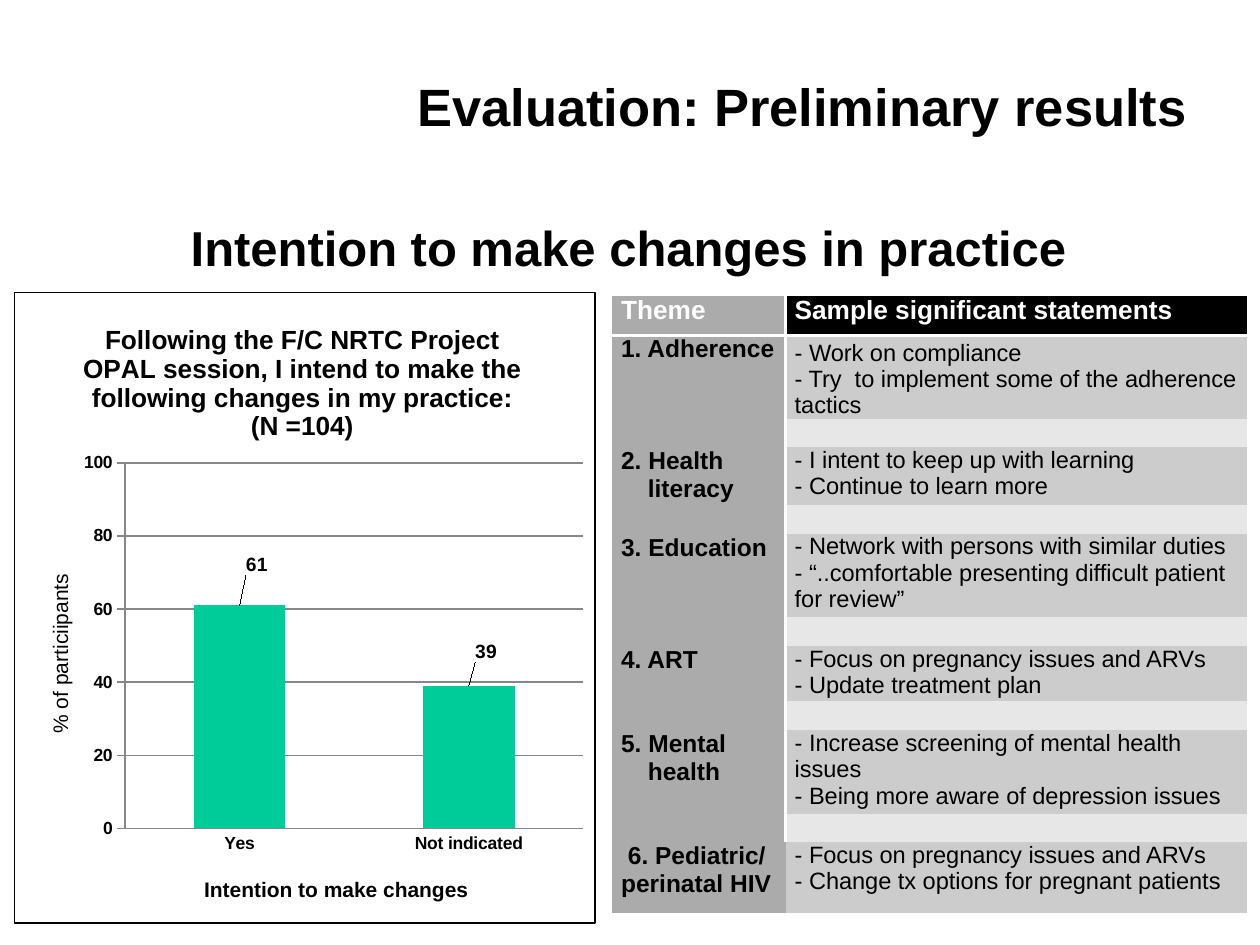
"""Build the slide on intention to make changes in practice."""
from dataclasses import dataclass

from lxml import etree
from pptx import Presentation
from pptx import util as u
from pptx.chart.data import CategoryChartData
from pptx.dml.color import RGBColor
from pptx.enum import chart as charts
from pptx.enum import text
from pptx.oxml.ns import qn

BLACK = RGBColor(0x00, 0x00, 0x00)
WHITE = RGBColor(0xFF, 0xFF, 0xFF)
GREEN = RGBColor(0x00, 0xCC, 0x99)
AXIS_GRAY = RGBColor(0x87, 0x87, 0x87)
THEME_GRAY = RGBColor(0xAB, 0xAB, 0xAB)
STATEMENT_GRAY = RGBColor(0xCC, 0xCC, 0xCC)
SPACER_GRAY = RGBColor(0xE7, 0xE7, 0xE7)
NO_STYLE = "{2D5ABB26-0587-4C30-8999-92F81FD0307C}"
SPACER_HEIGHT = 0.58


@dataclass
class Theme:
    name: str
    statements: list[str]
    height: float
    hanging: float = 0
    anchor: text.MSO_ANCHOR = text.MSO_ANCHOR.TOP


THEMES = [
    Theme("1. Adherence",
          ["- Work on compliance", "- Try  to implement some of the adherence tactics"],
          1.68, anchor=text.MSO_ANCHOR.BOTTOM),
    Theme("2. Health literacy",
          ["- I intent to keep up with learning", "- Continue to learn more"],
          1.16, hanging=0.54),
    Theme("3. Education",
          ["- Network with persons with similar duties",
           "- “..comfortable presenting difficult patient for review”"], 1.68),
    Theme("4. ART",
          ["- Focus on pregnancy issues and ARVs", "- Update treatment plan"], 1.12),
    Theme("5. Mental health",
          ["- Increase screening of mental health issues",
           "- Being more aware of depression issues"], 1.68, hanging=0.54),
    Theme("\u00a06. Pediatric/ perinatal HIV",
          ["- Focus on pregnancy issues and ARVs",
           "- Change tx options for pregnant patients"], 1.42),
]


def format_font(font, size: float, bold: bool = False, color: RGBColor = BLACK) -> None:
    font.name = "Arial"
    font.size = u.Pt(size)
    font.bold = bold
    font.color.rgb = color


def write(frame, lines: list[str], *, size: float, bold: bool = False,
          color: RGBColor = BLACK, align=None, hanging: float = 0) -> None:
    frame.text = "\n".join(lines)
    for para in frame.paragraphs:
        para.alignment = align
        if hanging:
            properties = para._p.get_or_add_pPr()
            properties.set("marL", str(u.Cm(hanging)))
            properties.set("indent", str(-u.Cm(hanging)))
        for span in para.runs:
            format_font(span.font, size, bold, color)
        if not para.runs:
            etree.SubElement(para._p, qn("a:endParaRPr"), sz=str(int(size * 100)))


def write_heading(box, line: str, size: float, place: tuple) -> None:
    box.left, box.top, box.width, box.height = map(u.Cm, place)
    frame = box.text_frame
    frame.word_wrap = True
    frame.auto_size = text.MSO_AUTO_SIZE.NONE
    frame.vertical_anchor = text.MSO_ANCHOR.MIDDLE
    write(frame, [line], size=size, bold=True, align=text.PP_ALIGN.CENTER)


def draw_line(parent, tag: str, points: float, color: RGBColor):
    line = etree.SubElement(parent, qn(tag), w=str(u.Pt(points)))
    fill = etree.SubElement(line, qn("a:solidFill"))
    etree.SubElement(fill, qn("a:srgbClr"), val=str(color))


def style_cell(cell, fill: RGBColor, borders: tuple = (), anchor=text.MSO_ANCHOR.TOP) -> None:
    cell.margin_left = cell.margin_right = u.Cm(0.18)
    cell.margin_top = cell.margin_bottom = 0
    cell.vertical_anchor = anchor
    for tag in borders:
        draw_line(cell._tc.get_or_add_tcPr(), tag, 2, WHITE)
    cell.fill.solid()
    cell.fill.fore_color.rgb = fill


def add_theme_table(page) -> None:
    count = 2 * len(THEMES)
    frame = page.shapes.add_table(count, 2, *map(u.Cm, (12.34, 5.97, 12.8, 12.5)))
    frame.element.xpath(".//a:tableStyleId")[0].text = NO_STYLE
    table = frame.table
    table.first_row = table.horz_banding = False
    for column, width in zip(table.columns, (3.5, 9.3)):
        column.width = u.Cm(width)
    table.rows[0].height = u.Cm(0.79)
    headers = [("Theme", THEME_GRAY, ("a:lnR", "a:lnB")),
               ("Sample significant statements", BLACK, ("a:lnB",))]
    for cell, (label, fill, borders) in zip(table.rows[0].cells, headers):
        style_cell(cell, fill, borders)
        write(cell.text_frame, [label], size=15, bold=True, color=WHITE)
    for index in range(1, count):
        name, statement = table.rows[index].cells
        style_cell(name, THEME_GRAY, ("a:lnR",) if index < count - 1 else ())
        if index % 2:
            theme = THEMES[index // 2]
            table.rows[index].height = u.Cm(theme.height)
            write(name.text_frame, [theme.name], size=14, bold=True, hanging=theme.hanging)
            style_cell(statement, STATEMENT_GRAY, anchor=theme.anchor)
            write(statement.text_frame, theme.statements, size=13.5)
        else:
            table.rows[index].height = u.Cm(SPACER_HEIGHT)
            style_cell(statement, SPACER_GRAY)
            for cell in (name, statement):
                write(cell.text_frame, [""], size=13)


def set_layout(element, position: int, **values) -> None:
    for old in element.findall(qn("c:layout")):
        element.remove(old)
    layout = etree.Element(qn("c:layout"))
    manual = etree.SubElement(layout, qn("c:manualLayout"))
    for tag, value in values.items():
        etree.SubElement(manual, qn(f"c:{tag}"), val=str(value))
    element.insert(position, layout)


def write_chart_title(owner, line: str, size: float, bold: bool, x: float, y: float) -> None:
    write(owner.text_frame, [line], size=size, bold=bold)
    set_layout(owner.element, 1, xMode="edge", yMode="edge", x=x, y=y)


def style_axis(axis, tick) -> None:
    axis.major_tick_mark = tick
    axis.minor_tick_mark = charts.XL_TICK_MARK.NONE
    axis.format.line.color.rgb = AXIS_GRAY
    format_font(axis.tick_labels.font, 10, True)


def add_intention_chart(page) -> None:
    data = CategoryChartData(number_format="0")
    data.categories = ["Yes", "Not indicated"]
    data.add_series("Series 1", [61, 39])
    chart = page.shapes.add_chart(charts.XL_CHART_TYPE.COLUMN_CLUSTERED,
                                  *map(u.Cm, (0.28, 5.89, 11.73, 12.73)), data).chart
    format_font(chart.font, 10)
    chart.has_legend = False
    write_chart_title(chart.chart_title,
                      "Following the F/C NRTC Project OPAL session, I intend to make the "
                      "following changes in my practice: (N =104)", 15, True, 0.11, 0.04)
    chart.chart_title.text_frame.paragraphs[0].alignment = text.PP_ALIGN.CENTER
    category, value = chart.category_axis, chart.value_axis
    style_axis(category, charts.XL_TICK_MARK.NONE)
    style_axis(value, charts.XL_TICK_MARK.OUTSIDE)
    write_chart_title(category.axis_title, "Intention to make changes", 12, True, 0.32, 0.92)
    write_chart_title(value.axis_title, "% of particiipants", 12, False, 0.05, 0.44)
    value.minimum_scale, value.maximum_scale, value.major_unit = 0, 100, 20
    value.major_gridlines.format.line.color.rgb = AXIS_GRAY

    plot = chart.plots[0]
    plot.gap_width = 150
    plot.vary_by_categories = False
    series = plot.series[0]
    series.format.fill.solid()
    series.format.fill.fore_color.rgb = GREEN
    for index in range(2):
        label = series.points[index].data_label
        format_font(label.font, 11, True)
        label.position = charts.XL_LABEL_POSITION.OUTSIDE_END
    for element, (x, y) in zip(chart.element.xpath(".//c:dLbl"),
                               [(0.03, -0.04), (0.03, -0.03)]):
        set_layout(element, 1, x=x, y=y)
    set_layout(chart.element.xpath(".//c:plotArea")[0], 0, layoutTarget="inner",
               xMode="edge", yMode="edge", x=0.19, y=0.27, w=0.79, h=0.58)
    border = etree.Element(qn("c:spPr"))
    etree.SubElement(border, qn("a:noFill"))
    draw_line(border, "a:ln", 0.75, BLACK)
    chart.element.find(qn("c:chart")).addnext(border)


def main() -> None:
    deck = Presentation()
    deck.slide_width, deck.slide_height = u.Cm(25.4), u.Cm(19.05)
    page = deck.slides.add_slide(deck.slide_layouts[5])
    write_heading(page.shapes.title, "Evaluation: Preliminary results", 30,
                  (7.82, 0.64, 16.71, 2.97))
    add_intention_chart(page)
    write_heading(page.shapes.add_textbox(0, 0, 0, 0), "Intention to make changes in practice",
                  28, (1.8, 4.27, 21.74, 1.4))
    add_theme_table(page)
    deck.save("out.pptx")


if __name__ == "__main__":
    main()
